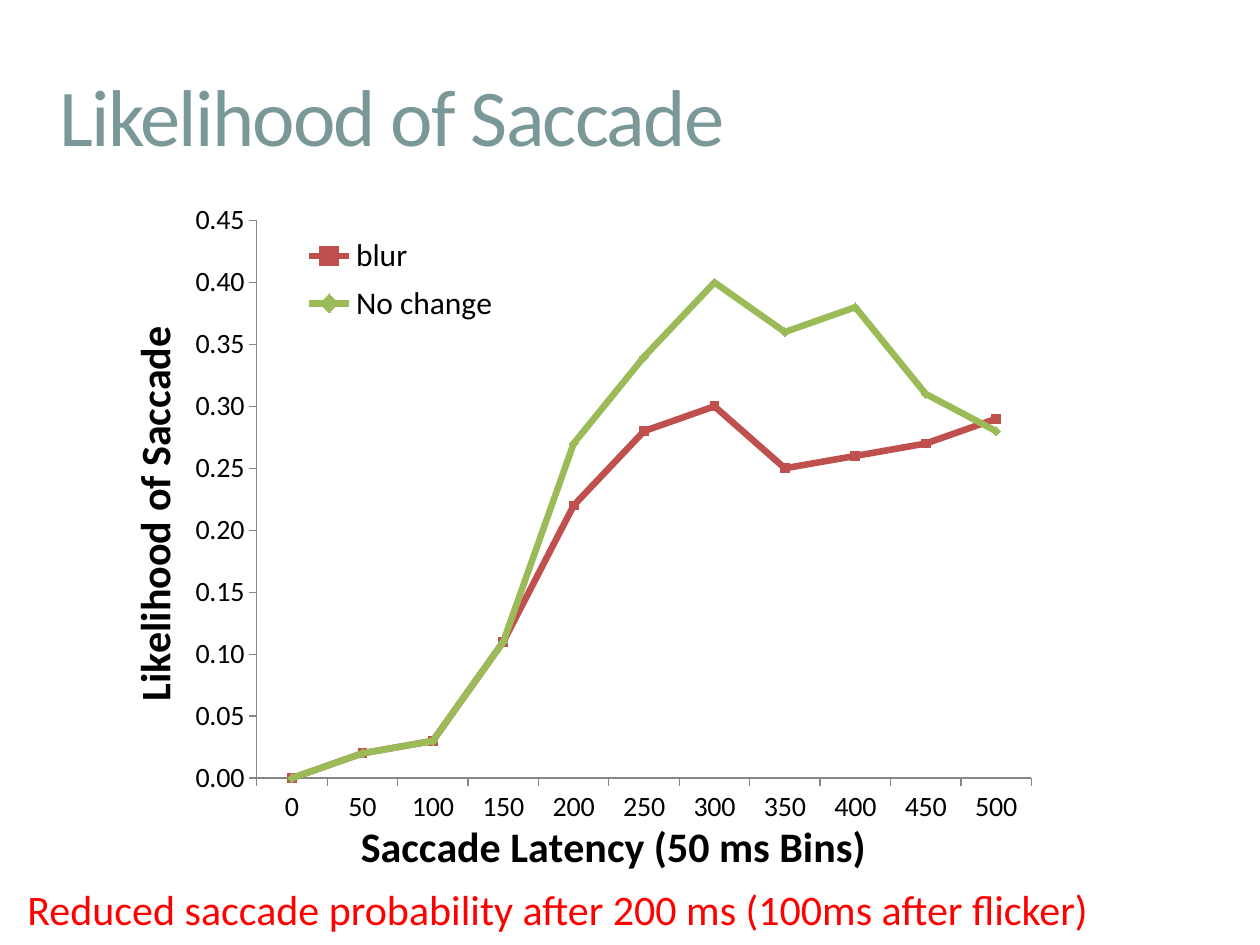
from lxml import etree
from pptx import Presentation
from pptx.chart.data import CategoryChartData
from pptx.dml.color import RGBColor
from pptx.enum.chart import (XL_CHART_TYPE, XL_LEGEND_POSITION,
                             XL_MARKER_STYLE, XL_TICK_MARK)
from pptx.enum.text import MSO_ANCHOR, PP_ALIGN
from pptx.oxml.ns import qn
from pptx.util import Inches, Pt

LINES = XL_CHART_TYPE.LINE_MARKERS
RIGHT = XL_LEGEND_POSITION.RIGHT
OUT, NONE = XL_TICK_MARK.OUTSIDE, XL_TICK_MARK.NONE
SQUARE, DIAMOND = XL_MARKER_STYLE.SQUARE, XL_MARKER_STYLE.DIAMOND
LEFT, MIDDLE = PP_ALIGN.LEFT, MSO_ANCHOR.MIDDLE

FONT = "Calibri"
TEAL = RGBColor(0x7B, 0x98, 0x99)
RED = RGBColor(0xFF, 0, 0)
BLACK = RGBColor(0, 0, 0)
GRAY = RGBColor(0x86, 0x86, 0x86)
BRICK = RGBColor(0xC0, 0x50, 0x4D)
GREEN = RGBColor(0x9B, 0xBB, 0x59)

WIDE, HIGH = Inches(10), Inches(7.5)
BINS = [str(ms) for ms in range(0, 501, 50)]
SERIES = [
    ("blur", BRICK, SQUARE,
     (0, 0.02, 0.03, 0.11, 0.22, 0.28, 0.3, 0.25, 0.26, 0.27, 0.29)),
    ("No change", GREEN, DIAMOND,
     (0, 0.02, 0.03, 0.11, 0.27, 0.34, 0.4, 0.36, 0.38, 0.31, 0.28)),
]


def style(font, size, color, bold=False):
    """Set the face, size, colour and weight of a font."""
    font.name, font.size, font.bold = FONT, Pt(size), bold
    font.color.rgb = color


def write(frame, text, size, color):
    """Add one left-aligned run to a text frame and return it."""
    frame.word_wrap = True
    para = frame.paragraphs[0]
    para.alignment = LEFT
    run = para.add_run()
    run.text = text
    style(run.font, size, color)
    return run


def place(node, spot, index, inner=False):
    """Give a chart part a manual layout, in shares of the chart."""
    for old in node.findall(qn("c:layout")):
        node.remove(old)
    layout = etree.Element(qn("c:layout"))
    manual = etree.SubElement(layout, qn("c:manualLayout"))
    pairs = [("layoutTarget", "inner")] if inner else []
    pairs += [("xMode", "edge"), ("yMode", "edge")]
    pairs += zip("xywh", spot)
    for tag, val in pairs:
        etree.SubElement(manual, qn("c:" + tag)).set("val", str(val))
    node.insert(index, layout)


def add_title(slide, box):
    """Fill the title placeholder within the box."""
    title = slide.shapes.title
    title.left, title.top, title.width, title.height = box
    title.text_frame.vertical_anchor = MIDDLE
    run = write(title.text_frame, "Likelihood of Saccade", 46, TEAL)
    run.font._element.set("spc", "-100")


def set_axis(axis, name):
    """Format an axis and its title."""
    axis.has_major_gridlines = False
    axis.major_tick_mark, axis.minor_tick_mark = OUT, NONE
    axis.format.line.color.rgb = GRAY
    style(axis.tick_labels.font, 16, BLACK)
    run = axis.axis_title.text_frame.paragraphs[0].add_run()
    run.text = name
    style(run.font, 24, BLACK, True)


def add_plot(slide, box):
    """Draw the line chart of saccade likelihood in the box."""
    data = CategoryChartData(number_format="0.00")
    data.categories = BINS
    for name, _, _, vals in SERIES:
        data.add_series(name, vals)
    chart = slide.shapes.add_chart(LINES, *box, data).chart
    chart.has_title = False
    style(chart.font, 10, BLACK)
    plot = chart.plots[0]
    plot.vary_by_categories = False
    for line, (_, color, mark, _) in zip(plot.series, SERIES):
        line.smooth = False
        line.format.line.color.rgb = color
        line.format.line.width = Pt(3.75)
        line.marker.style, line.marker.size = mark, 5
        line.marker.format.fill.solid()
        line.marker.format.fill.fore_color.rgb = color
        line.marker.format.line.color.rgb = color
    set_axis(chart.category_axis, "Saccade Latency (50 ms Bins)")
    rate = chart.value_axis
    set_axis(rate, "Likelihood of Saccade")
    rate.minimum_scale, rate.maximum_scale, rate.major_unit = 0, 0.45, 0.05
    rate.tick_labels.number_format = "#,##0.00"
    rate.tick_labels.number_format_is_linked = False
    chart.has_legend = True
    key = chart.legend
    key.position, key.include_in_layout = RIGHT, False
    style(key.font, 18, BLACK)
    place(key._element, (0.18, 0.05, 0.24, 0.15), 1)
    area = chart._chartSpace.find(".//" + qn("c:plotArea"))
    place(area, (0.147, 0.04, 0.823, 0.803), 0, True)


def add_note(slide, box):
    """Add the red finding line in the box."""
    note = slide.shapes.add_textbox(*box)
    write(note.text_frame,
          "Reduced saccade probability after 200 ms (100ms after flicker)",
          24, RED)


def share(left, top, width, height):
    """Turn shares of the slide's size into a box."""
    return (int(left * WIDE), int(top * HIGH),
            int(width * WIDE), int(height * HIGH))


def main():
    """Build and save the slide."""
    deck = Presentation()
    deck.slide_width, deck.slide_height = WIDE, HIGH
    slide = deck.slides.add_slide(deck.slide_layouts[5])
    add_title(slide, share(0.037, 0.037, 0.833, 0.167))
    add_plot(slide, share(0.094, 0.204, 0.747, 0.735))
    add_note(slide, share(0.012, 0.928, 0.974, 0.067))
    deck.save("out.pptx")


if __name__ == "__main__":
    main()
